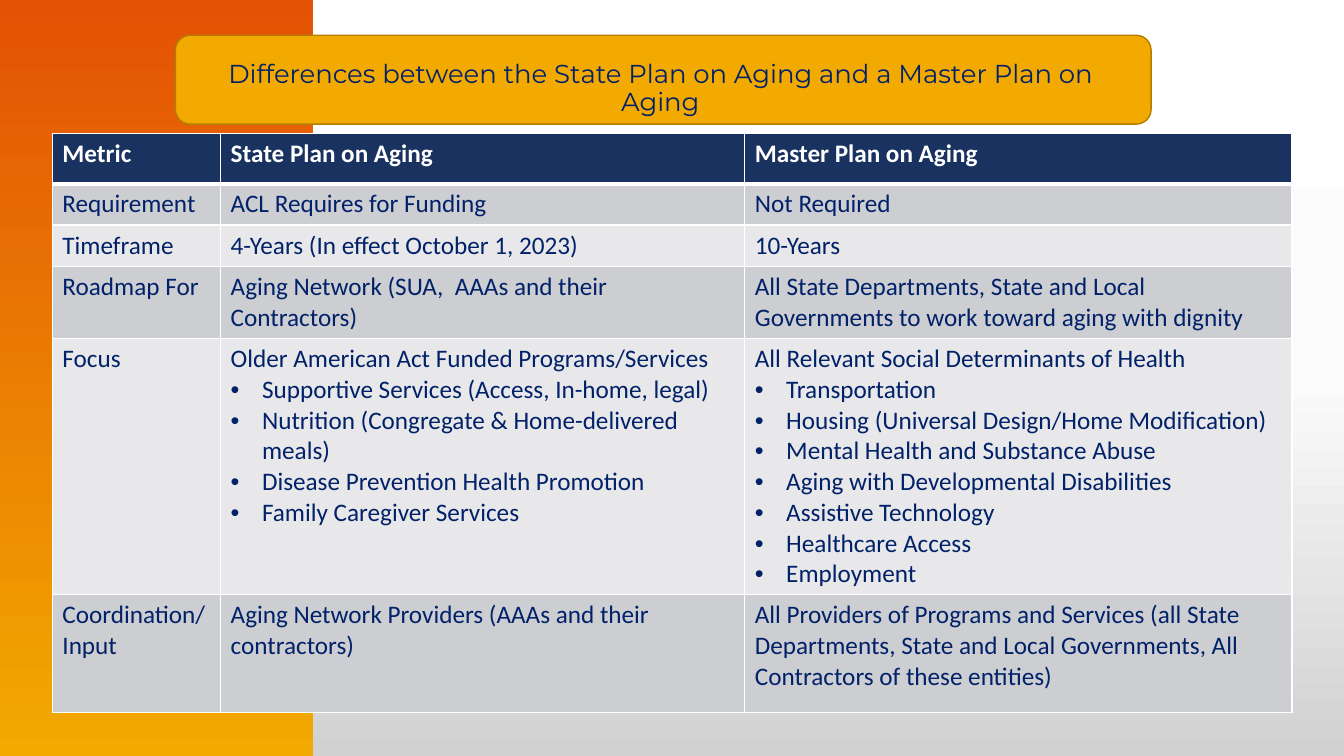
from copy import deepcopy

from lxml import etree
from pptx import Presentation
from pptx.dml.color import RGBColor
from pptx.enum.shapes import MSO_SHAPE
from pptx.enum.text import PP_ALIGN
from pptx.oxml.ns import qn
from pptx.util import Cm, Pt

RECTANGLE = MSO_SHAPE.RECTANGLE
ROUNDED = MSO_SHAPE.ROUNDED_RECTANGLE
CENTER = PP_ALIGN.CENTER

NAVY, HEADER_BLUE, WHITE = "012169", "1A3260", "FFFFFF"
ORANGE, GOLD, DARK_GOLD = "E35205", "F2A900", "B37D00"
BANDS = ["E8E8EA", "CDCED2"]
BULLET_INDENT = Cm(0.79)

COLUMN_WIDTHS = [4.24, 13.21, 13.79]
ROW_HEIGHTS = [1.27, 1.04, 1.04, 1.82, 6.46, 2.97]
# In a cell, the first line is plain and any further lines are bullets.
ROWS = [
    ["Metric", "State Plan on Aging", "Master Plan on Aging"],
    ["Requirement", "ACL Requires for Funding", "Not Required"],
    ["Timeframe", "4-Years (In effect October 1, 2023)", "10-Years"],
    ["Roadmap For", "Aging Network (SUA,  AAAs and their Contractors)",
     "All State Departments, State and Local Governments to work toward "
     "aging with dignity"],
    ["Focus",
     "Older American Act Funded Programs/Services\n"
     "Supportive Services (Access, In-home, legal)\n"
     "Nutrition (Congregate & Home-delivered meals)\n"
     "Disease Prevention Health Promotion\n"
     "Family Caregiver Services",
     "All Relevant Social Determinants of Health\n"
     "Transportation\n"
     "Housing (Universal Design/Home Modification)\n"
     "Mental Health and Substance Abuse\n"
     "Aging with Developmental Disabilities\n"
     "Assistive Technology\n"
     "Healthcare Access\n"
     "Employment"],
    ["Coordination/Input",
     "Aging Network Providers (AAAs and their contractors)",
     "All Providers of Programs and Services (all State Departments, State "
     "and Local Governments, All Contractors of these entities)"],
]


def color(hex_code):
    return RGBColor.from_string(hex_code)


def fill_downward(fill, stops):
    """Fill with a top-to-bottom gradient of (position, colour) stops."""
    fill.gradient()
    fill.gradient_angle = 270
    first = fill.gradient_stops[0]._gs
    for _ in stops[2:]:
        first.addnext(deepcopy(first))
    fill.gradient()
    for stop, (position, hex_code) in zip(fill.gradient_stops, stops):
        stop.position = position
        stop.color.rgb = color(hex_code)


prs = Presentation()
prs.slide_width, prs.slide_height = Cm(33.87), Cm(19.05)
slide = prs.slides.add_slide(prs.slide_layouts[6])
fill_downward(slide.background.fill, [(0, WHITE), (0.5, "FBFBFB"), (1, "D1D1D1")])

side_band = slide.shapes.add_shape(RECTANGLE, 0, 0, Cm(7.9), prs.slide_height)
side_band.shadow.inherit = False
side_band.line.fill.background()
fill_downward(side_band.fill, [(0, ORANGE), (1, GOLD)])

banner = slide.shapes.add_shape(ROUNDED, Cm(4.42), Cm(0.89), Cm(24.59), Cm(2.24))
banner.shadow.inherit = False
banner.fill.solid()
banner.fill.fore_color.rgb = color(GOLD)
banner.line.color.rgb = color(DARK_GOLD)
banner.line.width = Pt(1)

title = slide.shapes.add_textbox(Cm(5.16), Cm(1.42), Cm(22.96), Cm(1.4))
title.text_frame.word_wrap = True
heading = title.text_frame.paragraphs[0]
heading.text = "Differences between the State Plan on Aging and a Master Plan on Aging"
heading.alignment = CENTER
heading.line_spacing = 0.9
heading.font.name = "Montserrat"
heading.font.size = Pt(18.5)
heading.font.color.rgb = color(NAVY)

comparison = slide.shapes.add_table(
    len(ROWS), len(COLUMN_WIDTHS), Cm(1.32), Cm(3.36),
    Cm(sum(COLUMN_WIDTHS)), Cm(sum(ROW_HEIGHTS))).table
for column, width in zip(comparison.columns, COLUMN_WIDTHS):
    column.width = Cm(width)

for r, (row, height, texts) in enumerate(zip(comparison.rows, ROW_HEIGHTS, ROWS)):
    row.height = Cm(height)
    is_header = r == 0
    for cell, text in zip(row.cells, texts):
        cell.text = text
        borders = cell._tc.get_or_add_tcPr()
        for side in "LRTB":
            thick = (r, side) in [(0, "B"), (1, "T")]
            border = etree.SubElement(borders, qn(f"a:ln{side}"),
                                      w=str(Pt(3 if thick else 1)))
            paint = etree.SubElement(border, qn("a:solidFill"))
            etree.SubElement(paint, qn("a:srgbClr"), val=WHITE)
        cell.fill.solid()
        cell.fill.fore_color.rgb = color(HEADER_BLUE if is_header else BANDS[r % 2])
        for p, paragraph in enumerate(cell.text_frame.paragraphs):
            paragraph.font.name = "Calibri"
            paragraph.font.size = Pt(18)
            paragraph.font.bold = is_header
            paragraph.font.color.rgb = color(WHITE if is_header else NAVY)
            if p > 0:
                properties = paragraph._p.get_or_add_pPr()
                properties.set("marL", str(BULLET_INDENT))
                properties.set("indent", str(-BULLET_INDENT))
                bullet_font = etree.Element(qn("a:buFont"), typeface="Arial")
                bullet = etree.Element(qn("a:buChar"), char="•")
                properties.insert(0, bullet_font)
                bullet_font.addnext(bullet)

prs.save("out.pptx")
